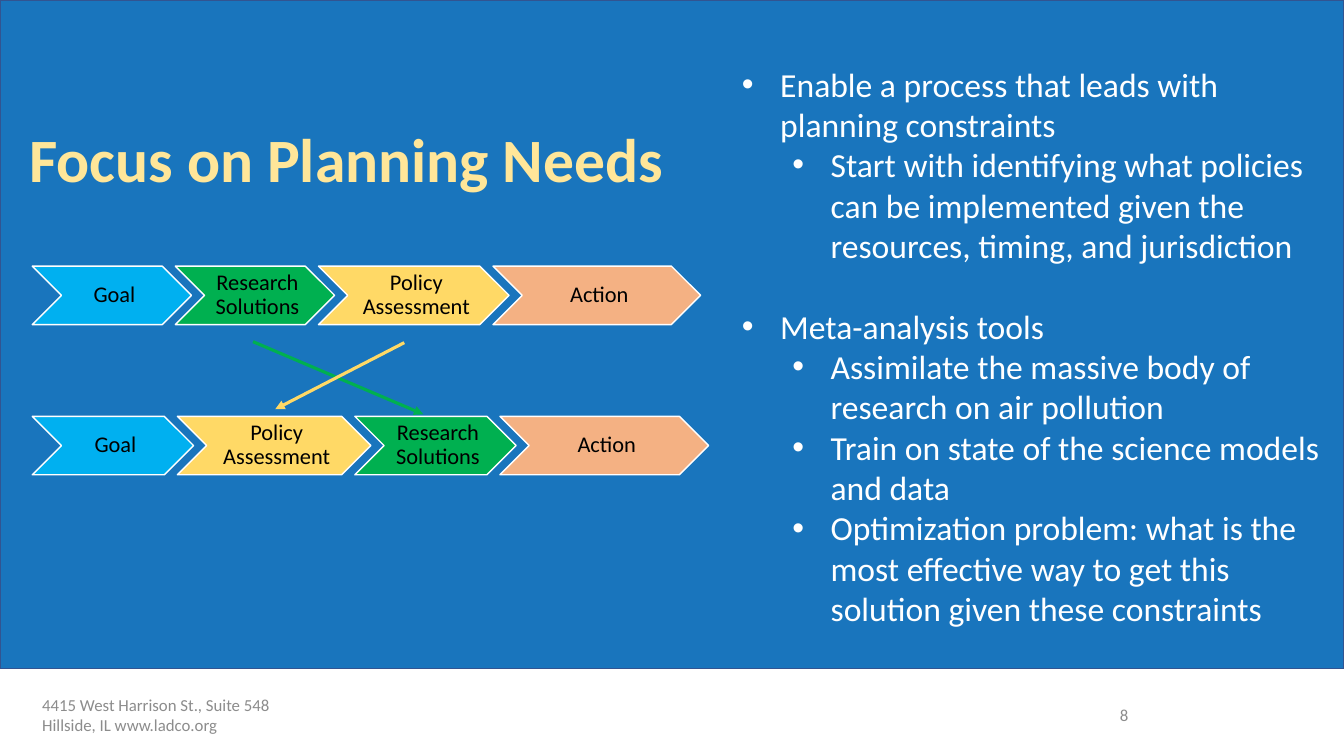
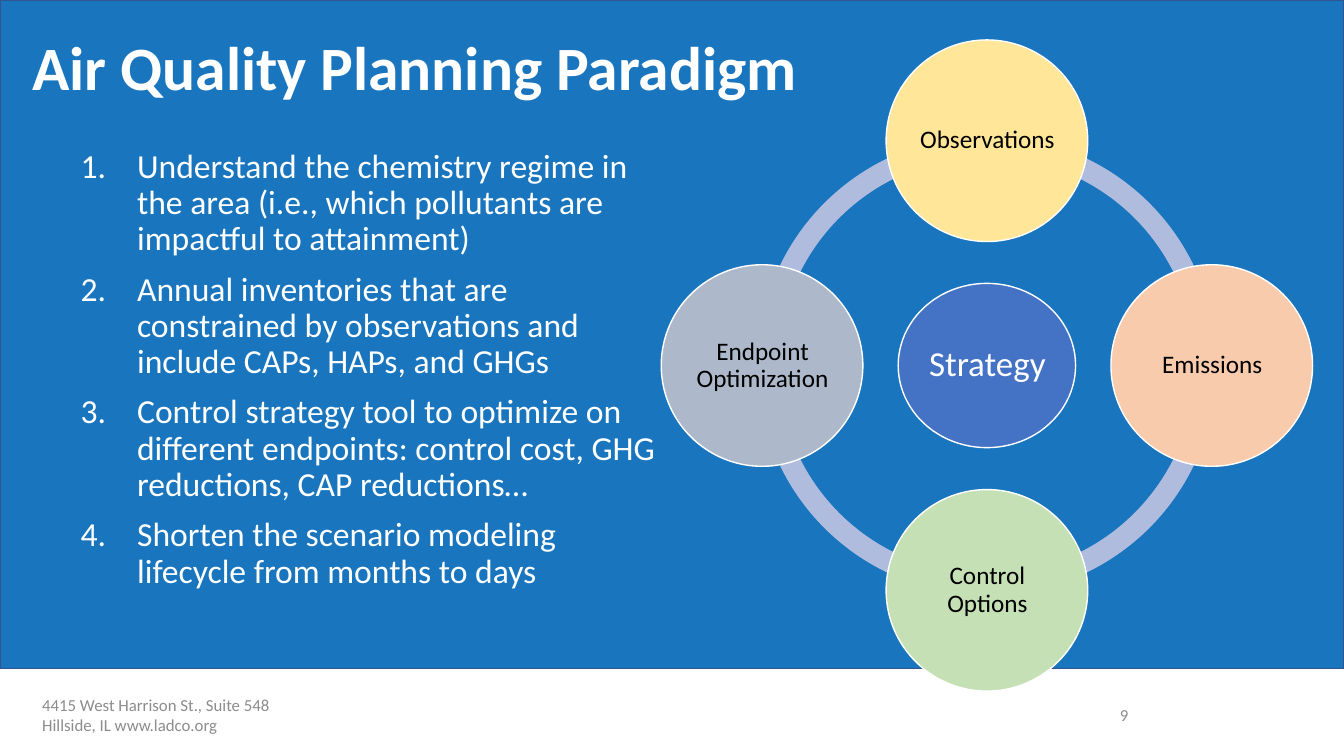
from pptx import Presentation
from pptx.dml.color import RGBColor
from pptx.enum.shapes import MSO_CONNECTOR, MSO_SHAPE
from pptx.enum.text import MSO_ANCHOR, MSO_AUTO_SIZE, PP_ALIGN
from pptx.oxml.ns import qn
from pptx.util import Inches, Pt
from lxml import etree

RECT, OVAL = MSO_SHAPE.RECTANGLE, MSO_SHAPE.OVAL
CHEVRON, ARC = MSO_SHAPE.CHEVRON, MSO_SHAPE.BLOCK_ARC
LINE = MSO_CONNECTOR.STRAIGHT
LEFT, MID, RIGHT = PP_ALIGN.LEFT, PP_ALIGN.CENTER, PP_ALIGN.RIGHT
TOP, CENTER = MSO_ANCHOR.TOP, MSO_ANCHOR.MIDDLE
FIXED = MSO_AUTO_SIZE.NONE

FONT = "Calibri"
BLUE = RGBColor(0x19, 0x75, 0xBD)
EDGE = RGBColor(0x32, 0x54, 0x91)
WHITE = RGBColor(0xFF, 0xFF, 0xFF)
BLACK = RGBColor(0x00, 0x00, 0x00)
GRAY = RGBColor(0x8C, 0x8C, 0x8C)
CREAM = RGBColor(0xFF, 0xE6, 0x99)
SKY = RGBColor(0x00, 0xB0, 0xF0)
GREEN = RGBColor(0x00, 0xB0, 0x50)
GOLD = RGBColor(0xFF, 0xD9, 0x66)
ORANGE = RGBColor(0xF4, 0xB1, 0x83)
LILAC = RGBColor(0xB0, 0xBC, 0xDE)
ROYAL = RGBColor(0x44, 0x72, 0xC4)
PEACH = RGBColor(0xF8, 0xCB, 0xAD)
MINT = RGBColor(0xC5, 0xE0, 0xB4)
STEEL = RGBColor(0xAD, 0xB9, 0xCA)

deck = Presentation()
deck.slide_width, deck.slide_height = Inches(13.33), Inches(7.5)
COL, ROW = deck.slide_width / 100, deck.slide_height / 100


def write(frame, items, size, color, align=LEFT, anchor=CENTER, space=1.0):
    frame.word_wrap = True
    frame.auto_size = FIXED
    frame.vertical_anchor = anchor
    for i, (text, level, gap, mark, hang) in enumerate(items):
        para = frame.paragraphs[0] if i == 0 else frame.add_paragraph()
        para.text = text
        para.level = level
        if mark:
            props = para._p.get_or_add_pPr()
            props.set("marL", str(Inches(hang + level / 2)))
            props.set("indent", str(-Inches(hang)))
            tag, key, value = mark
            etree.SubElement(props, qn(tag)).set(key, value)
        para.alignment = align
        para.line_spacing = space
        para.space_before = Pt(gap)
        para.font.name = FONT
        para.font.size = Pt(size)
        para.font.color.rgb = color


def draw(slide, kind, x, y, w, h, fill, edge=WHITE, text="", size=16, color=BLACK, pad=0.03):
    shape = slide.shapes.add_shape(kind, int(x * COL), int(y * ROW), int(w * COL), int(h * ROW))
    shape.shadow.inherit = False
    shape.fill.solid()
    shape.fill.fore_color.rgb = fill
    if edge is None:
        shape.line.fill.background()
    else:
        shape.line.color.rgb = edge
        shape.line.width = Pt(1)
    if text:
        frame = shape.text_frame
        frame.margin_left = Inches(pad)
        frame.margin_right = frame.margin_top = frame.margin_bottom = Inches(0.02)
        write(frame, [(text, 0, 0, None, 0)], size, color, MID, space=0.9)
    return shape


DOT = ("a:buChar", "char", "•")
NUM = ("a:buAutoNum", "type", "arabicPeriod")
NEEDS = [
    ("Enable a process that leads with planning constraints", 0, 0),
    ("Start with identifying what policies can be implemented given the resources, timing, and jurisdiction", 1, 0),
    ("Meta-analysis tools", 0, 29),
    ("Assimilate the massive body of research on air pollution", 1, 0),
    ("Train on state of the science models and data", 1, 0),
    ("Optimization problem: what is the most effective way to get this solution given these constraints", 1, 0),
]
STEPS = [
    ("Understand the chemistry regime in the area (i.e., which pollutants are impactful to attainment)", 0, 0),
    ("Annual inventories that are constrained by observations and include CAPs, HAPs, and GHGs", 0, 10),
    ("Control strategy tool to optimize on different endpoints: control cost, GHG reductions, CAP reductions…", 0, 10),
    ("Shorten the scenario modeling lifecycle from months to days", 0, 10),
]
PAGES = [
    ("8", "Focus on Planning Needs", CREAM, (1.43, 14.8, 52.95, 13.33),
     NEEDS, DOT, 0.38, 1.0, (54.45, 7.73, 44.78, 82.13)),
    ("9", "Air Quality Planning Paradigm", WHITE, (1.65, -0.27, 60.6, 19.33),
     STEPS, NUM, 0.56, 0.9, (5.25, 19.07, 44.78, 62.27)),
]
FOOT = "4415 West Harrison St., Suite 548 Hillside, IL www.ladco.org"

slides = []
for page, head, tint, spot, items, mark, hang, space, area in PAGES:
    slide = deck.slides.add_slide(deck.slide_layouts[1])
    slides.append(slide)
    title, body = slide.placeholders
    for holder, (x, y, w, h) in ((title, spot), (body, area)):
        holder.left, holder.top = int(x * COL), int(y * ROW)
        holder.width, holder.height = int(w * COL), int(h * ROW)
    write(title.text_frame, [(head, 0, 0, None, 0)], 44, tint, space=0.9)
    title.text_frame.paragraphs[0].font.bold = True
    rows = [(*item, mark, hang) for item in items]
    write(body.text_frame, rows, 24, WHITE, anchor=TOP, space=space)
    for text, align, x, y, w, h in ((FOOT, LEFT, 2.4, 90.8, 21.75, 7.47),
                                    (page, RIGHT, 62.2, 91.87, 22.5, 5.33)):
        note = slide.shapes.add_textbox(int(x * COL), int(y * ROW), int(w * COL), int(h * ROW))
        write(note.text_frame, [(text, 0, 0, None, 0)], 12, GRAY, align)

needs, plan = slides

band = draw(needs, RECT, 0, 0, 100, 88.4, BLUE, EDGE)
band.element.nvSpPr.cNvPr.set("id", "99")
deck.slide_master.shapes.element.insert(2, band.element)

GOAL, ACTION = ("Goal", SKY), ("Action", ORANGE)
STUDY, POLICY = ("Research Solutions", GREEN), ("Policy Assessment", GOLD)
CHAINS = [
    (35.2, (GOAL, STUDY, POLICY, ACTION), (11.85, 11.85, 14.18, 15.45)),
    (55.07, (GOAL, POLICY, STUDY, ACTION), (12, 14.4, 12, 15.53)),
]
for y, links, widths in CHAINS:
    x = 2.4
    for (text, fill), w in zip(links, widths):
        draw(needs, CHEVRON, x, y, w, 7.73, fill, text=text, pad=0.07)
        x += w - 1.2

for x, y, to, end, tint in ((18.83, 45.2, 31.5, 54.8, GREEN), (30.08, 45.33, 20.48, 54.13, GOLD)):
    arrow = needs.shapes.add_connector(LINE, int(x * COL), int(y * ROW), int(to * COL), int(end * ROW))
    arrow.line.color.rgb = tint
    arrow.line.width = Pt(2.25)
    props = arrow.element.spPr
    etree.SubElement(props.find(qn("a:ln")), qn("a:tailEnd")).set("type", "triangle")
    etree.SubElement(props, qn("a:effectLst"))

MIDX, MIDY = 73.43, 48.35
RATIO = COL / ROW
RING, DISC, REACH = 34.2, 15, 16.73
for turn in (0, 54, 108, 162):
    arc = draw(plan, ARC, MIDX - RING / 2, MIDY - RING * RATIO / 2, RING, RING * RATIO, LILAC, None)
    for i, value in enumerate((turn, (turn + 54) % 216, 0.046)):
        arc.adjustments[i] = value

DISCS = [
    ("Strategy", ROYAL, 0, 0, 13.2, 21.73, 25, WHITE),
    ("Observations", CREAM, 0, -1, DISC, DISC * RATIO, 18, BLACK),
    ("Emissions", PEACH, 1, 0, DISC, DISC * RATIO, 18, BLACK),
    ("Control Options", MINT, 0, 1, DISC, DISC * RATIO, 18, BLACK),
    ("Endpoint Optimization", STEEL, -1, 0, DISC, DISC * RATIO, 18, BLACK),
]
for text, fill, dx, dy, w, h, size, color in DISCS:
    x = MIDX + dx * REACH - w / 2
    y = MIDY + dy * REACH * RATIO - h / 2
    draw(plan, OVAL, x, y, w, h, fill, text=text, size=size, color=color)

deck.save("out.pptx")
